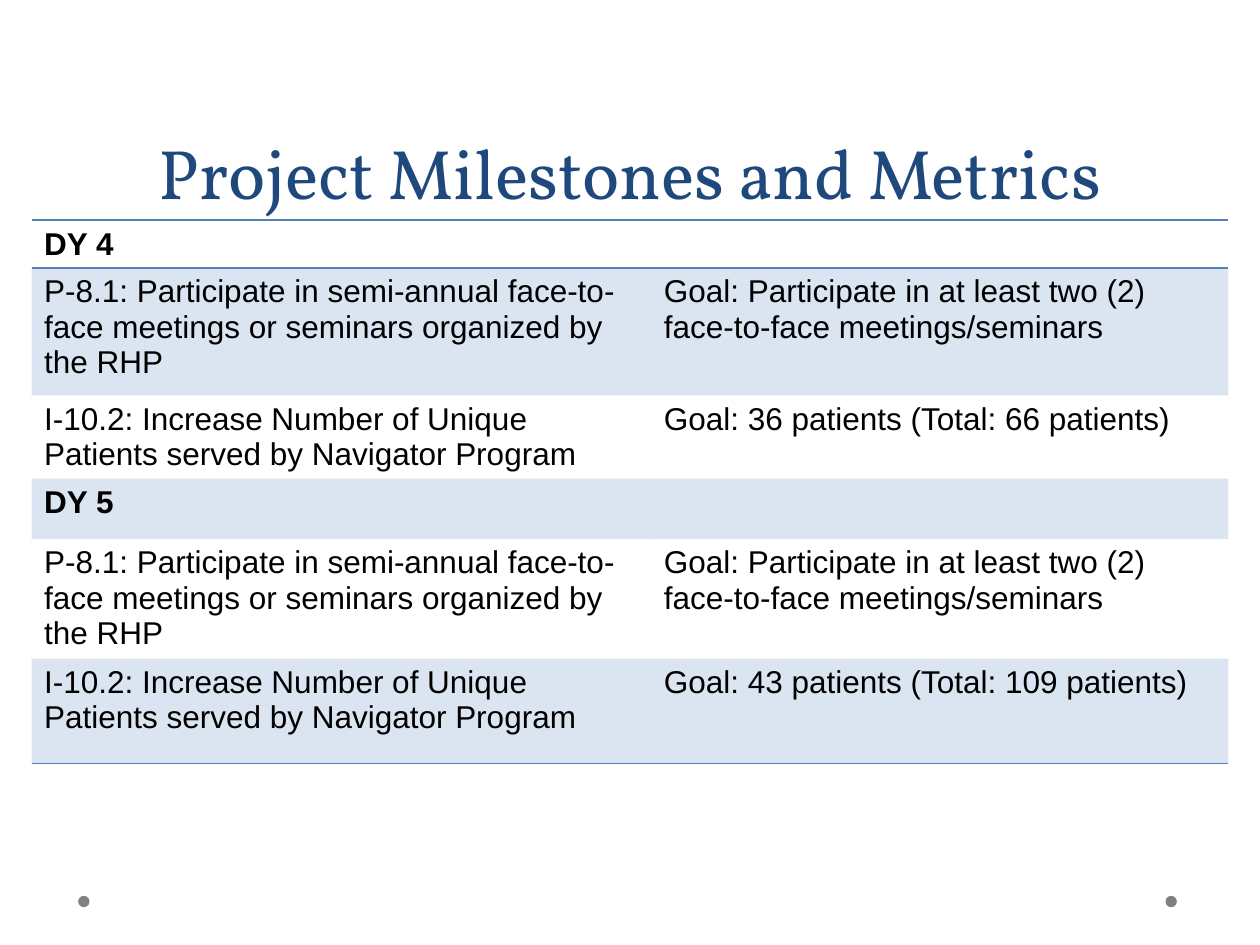
from lxml import etree
from pptx import Presentation
from pptx import util as u
from pptx.dml.color import RGBColor
from pptx.enum import shapes, text
from pptx.oxml.ns import qn

BLUE, NAVY, GREY, BLACK = "4F81BD", "1F497D", "808080", "000000"
PLAIN_TABLE = "{2D5ABB26-0587-4C30-8999-92F81FD0307C}"

PARTICIPATE = ["P-8.1: Participate in semi‐annual face-to-face meetings or seminars organized by",
               "the RHP"]
INCREASE = ["I-10.2: Increase Number of Unique",
            "Patients served by Navigator Program"]
MEETINGS = ["Goal: Participate in at least two (2) face-to-face meetings/seminars"]
# row height, left paragraphs, right paragraphs (None: year heading)
MILESTONES = [
    (0.38, ["DY 4"], None),
    (1.01, PARTICIPATE, MEETINGS),
    (0.66, INCREASE, ["Goal: 36 patients (Total: 66 patients)"]),
    (0.48, ["DY 5"], None),
    (0.95, PARTICIPATE, MEETINGS),
    (0.83, INCREASE, ["Goal: 43 patients (Total: 109 patients)"]),
]


def rgb(value):
    return RGBColor.from_string(value)


class Deck:
    """Style and current slide; lengths are shares of the slide's size."""

    title_font, body_font = "Vollkorn", "Arial"

    def __init__(self):
        self.prs = Presentation()
        self.prs.slide_width, self.prs.slide_height = u.Inches(10), u.Inches(7.5)
        self.s = self.prs.slides.add_slide(self.prs.slide_layouts[5])

    def x(self, share):
        return int(self.prs.slide_width * share)

    def y(self, share):
        return int(self.prs.slide_height * share)

    def run(self, p, words, font, size, color, bold=False):
        r = p.add_run()
        r.text = words
        r.font.name, r.font.size, r.font.bold = font, u.Pt(size), bold
        r.font.color.rgb = rgb(color)

    def title(self, words, left, top, width, height):
        sp = self.s.shapes.title
        sp.left, sp.top = self.x(left), self.y(top)
        sp.width, sp.height = self.x(width), self.y(height)
        tf = sp.text_frame
        tf.vertical_anchor = text.MSO_ANCHOR.BOTTOM
        p = tf.paragraphs[0]
        p.alignment, p.line_spacing = text.PP_ALIGN.CENTER, u.Pt(58)
        self.run(p, words, self.title_font, 40, NAVY)

    def dot(self, left, top):
        size = u.Inches(0.09)
        sp = self.s.shapes.add_shape(shapes.MSO_SHAPE.OVAL, self.x(left), self.y(top), size, size)
        sp.shadow.inherit = False
        sp.fill.solid()
        sp.fill.fore_color.rgb = rgb(GREY)
        sp.line.fill.background()

    def border(self, cell, side):
        ln = etree.SubElement(cell._tc.get_or_add_tcPr(), qn(f"a:ln{side}"), w=str(u.Pt(1)))
        fill = etree.SubElement(ln, qn("a:solidFill"))
        etree.SubElement(fill, qn("a:srgbClr"), val=BLUE)

    def shade(self, cell, banded):
        if not banded:
            cell.fill.background()
            return
        cell.fill.solid()
        cell.fill.fore_color.rgb = rgb(BLUE)
        color = cell._tc.tcPr.find(qn("a:solidFill")).find(qn("a:srgbClr"))
        etree.SubElement(color, qn("a:alpha"), val="20000")

    def cell_text(self, cell, lines, bold):
        tf = cell.text_frame
        for i, line in enumerate(lines):
            p = tf.add_paragraph() if i else tf.paragraphs[0]
            self.run(p, line, self.body_font, 18, BLACK, bold)

    def table(self, rows, left, top, widths):
        height = u.Inches(sum(row[0] for row in rows))
        frame = self.s.shapes.add_table(len(rows), len(widths), self.x(left), self.y(top),
                                        self.x(sum(widths)), height)
        table = frame.table
        table.first_row = table.horz_banding = False
        table._tbl.tblPr.find(qn("a:tableStyleId")).text = PLAIN_TABLE
        for column, width in zip(table.columns, widths):
            column.width = self.x(width)
        sides = {0: "TB", len(rows) - 1: "B"}
        for i, (row_height, *contents) in enumerate(rows):
            table.rows[i].height = u.Inches(row_height)
            for j, lines in enumerate(contents):
                cell = table.cell(i, j)
                for side in sides.get(i, ""):
                    self.border(cell, side)
                self.shade(cell, banded=i % 2 == 1)
                self.cell_text(cell, lines or [], bold=contents[1] is None)
        table.cell(0, 0).merge(table.cell(0, 1))


def main():
    deck = Deck()
    for left in (0.925, 0.062):
        deck.dot(left, 0.948)
    deck.title("Project Milestones and Metrics", 0.05, 0.056, 0.9, 0.177)
    deck.table(MILESTONES, 0.025, 0.233, (0.492, 0.458))
    deck.prs.save("out.pptx")


if __name__ == "__main__":
    main()
